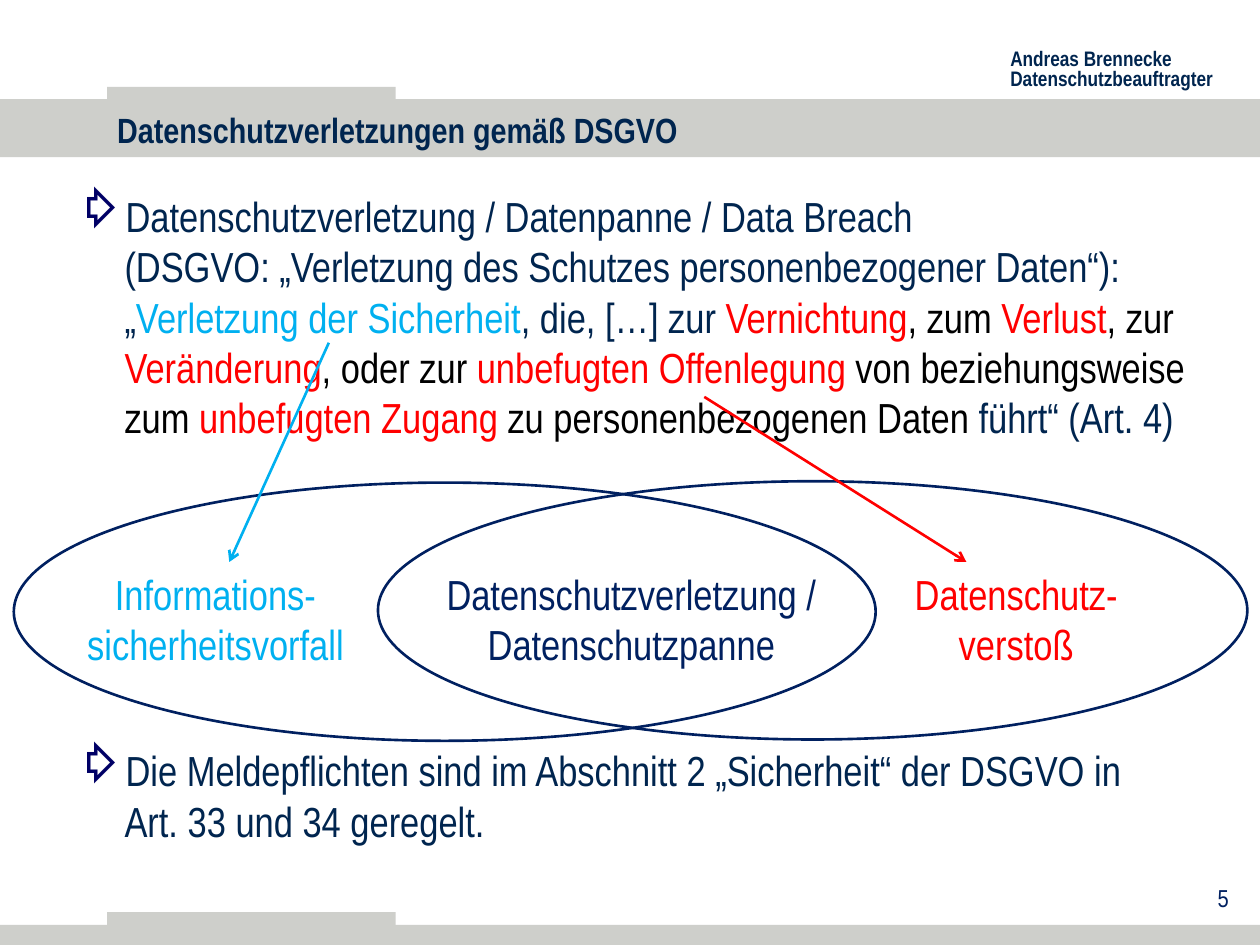
from typing import NamedTuple

from lxml.etree import SubElement
from pptx import Presentation
from pptx.dml.color import RGBColor
from pptx.enum.shapes import MSO_CONNECTOR, MSO_SHAPE
from pptx.enum.text import MSO_ANCHOR, MSO_AUTO_SIZE, PP_ALIGN
from pptx.oxml.ns import qn
from pptx.util import Inches, Pt

SLIDE_WIDTH, SLIDE_HEIGHT = Inches(10), Inches(7.5)
FONT = "Arial Narrow"
NAVY, BLUE, CYAN, RED, BLACK, GREY = "00254F", "002060", "00B0F0", "FF0000", "000000", "CECFCB"
BULLET_COLOR = "000066"


class Area(NamedTuple):
    left: float
    top: float
    width: float
    height: float


class Label(NamedTuple):
    area: Area
    words: str
    color: str


class Arrow(NamedTuple):
    start: tuple[float, float]
    end: tuple[float, float]
    color: str


class Point(NamedTuple):
    runs: list[tuple[str, str]]
    space_before: float


def across(percent: float) -> int:
    return round(SLIDE_WIDTH * percent / 100)


def down(percent: float) -> int:
    return round(SLIDE_HEIGHT * percent / 100)


def place(area: Area) -> tuple[int, int, int, int]:
    return across(area.left), down(area.top), across(area.width), down(area.height)


def rgb(color: str) -> RGBColor:
    return RGBColor.from_string(color)


def write(paragraph, words: str, *, color: str, size: float = 24, bold: bool = False,
          align=PP_ALIGN.LEFT, spacing: float = 1.0) -> None:
    paragraph.alignment = align
    paragraph.line_spacing = spacing
    for number, line in enumerate(words.split("\n")):
        if number:
            paragraph.add_line_break()
        if line:
            run = paragraph.add_run()
            run.text = line
            run.font.name = FONT
            run.font.size = Pt(size)
            run.font.bold = bold
            run.font.color.rgb = rgb(color)


def add_frame(slide, area: Area, wrap: bool = True):
    frame = slide.shapes.add_textbox(*place(area)).text_frame
    frame.word_wrap = wrap
    return frame


def add_band(slide, area: Area) -> None:
    band = slide.shapes.add_shape(MSO_SHAPE.RECTANGLE, *place(area))
    band.shadow.inherit = False
    band.fill.solid()
    band.fill.fore_color.rgb = rgb(GREY)
    band.line.fill.background()


def add_set(slide, area: Area) -> None:
    ellipse = slide.shapes.add_shape(MSO_SHAPE.OVAL, *place(area))
    ellipse.shadow.inherit = False
    ellipse.fill.background()
    ellipse.line.color.rgb = rgb(BLUE)
    ellipse.line.width = Pt(1.5)


def add_arrow(slide, arrow: Arrow) -> None:
    (x1, y1), (x2, y2) = arrow.start, arrow.end
    connector = slide.shapes.add_connector(
        MSO_CONNECTOR.STRAIGHT, across(x1), down(y1), across(x2), down(y2))
    connector.line.color.rgb = rgb(arrow.color)
    connector.line.width = Pt(1.5)
    SubElement(connector.line._get_or_add_ln(), qn("a:tailEnd"), type="arrow")
    SubElement(connector._element.spPr, qn("a:effectLst"))


def add_bullet(paragraph) -> None:
    properties = paragraph._p.get_or_add_pPr()
    properties.set("marL", str(Inches(0.38)))
    properties.set("indent", str(-Inches(0.38)))
    bullet_color = SubElement(properties, qn("a:buClr"))
    SubElement(bullet_color, qn("a:srgbClr"), val=BULLET_COLOR)
    SubElement(properties, qn("a:buChar"), char="⇨")


BANDS = [
    Area(left, top, width, height)
    for left, width, tops, height in [(0, 100, (10.5, 97.87), 6.13), (8.5, 22.9, (9.2, 96.53), 1.73)]
    for top in tops
]
BANDS[1] = BANDS[1]._replace(height=100 - BANDS[1].top)

POINTS = [
    Point([
        ("Datenschutzverletzung / Datenpanne / Data Breach\n"
         "(DSGVO: „Verletzung des Schutzes personenbezogener Daten“):\n„", NAVY),
        ("Verletzung der Sicherheit", CYAN),
        (", die, […] zur ", NAVY),
        ("Vernichtung", RED),
        (", zum", BLACK),
        (" Verlust", RED),
        (", zur ", BLACK),
        ("Veränderung", RED),
        (", oder zur ", BLACK),
        ("unbefugten Offenlegung ", RED),
        ("von beziehungsweise zum ", BLACK),
        ("unbefugten Zugang ", RED),
        ("zu personenbezogenen Daten ", BLACK),
        ("führt“ (Art. 4)", NAVY),
    ], 0),
    Point([("Die Meldepflichten sind im Abschnitt 2 „Sicherheit“ der DSGVO in\n"
            "Art. 33 und 34 geregelt.", NAVY)], 173),
]

LABELS = [
    Label(Area(5.8, 59.47, 22.6, 12.13), "Informations-\nsicherheitsvorfall", CYAN),
    Label(Area(71.5, 59.47, 18.3, 12.13), "Datenschutz-\nverstoß", RED),
    Label(Area(34.2, 59.47, 31.8, 12.13), "Datenschutzverletzung /\nDatenschutzpanne", BLUE),
]
SETS = [Area(1.1, 51.07, 68.4, 27.33), Area(30, 50.93, 69, 27.33)]
ARROWS = [
    Arrow((26.1, 36.27), (18.2, 59.47), CYAN),
    Arrow((55.9, 42), (76.7, 59.47), RED),
]


def main() -> None:
    presentation = Presentation()
    presentation.slide_width, presentation.slide_height = SLIDE_WIDTH, SLIDE_HEIGHT
    slide = presentation.slides.add_slide(presentation.slide_layouts[5])

    for band in BANDS:
        add_band(slide, band)

    author = add_frame(slide, Area(79.2, 4.67, 18.3, 5.6), wrap=False)
    write(author.paragraphs[0], "Andreas Brennecke\nDatenschutzbeauftragter",
          color=NAVY, size=12, bold=True, spacing=0.8)

    title = slide.shapes.title
    title.left, title.top, title.width, title.height = place(Area(8.3, 10.93, 87, 5.6))
    title.text_frame.vertical_anchor = MSO_ANCHOR.MIDDLE
    title.text_frame.auto_size = MSO_AUTO_SIZE.NONE
    write(title.text_frame.paragraphs[0], "Datenschutzverletzungen gemäß DSGVO",
          color=NAVY, size=20, bold=True)
    slide.shapes._spTree.append(title._element)

    body = add_frame(slide, Area(5.1, 19.47, 93.2, 75.87))
    for number, point in enumerate(POINTS):
        paragraph = body.add_paragraph() if number else body.paragraphs[0]
        add_bullet(paragraph)
        paragraph.space_before = Pt(point.space_before)
        for words, color in point.runs:
            write(paragraph, words, color=color)

    for label in LABELS:
        frame = add_frame(slide, label.area, wrap=False)
        write(frame.paragraphs[0], label.words, color=label.color, align=PP_ALIGN.CENTER)
    for area in SETS:
        add_set(slide, area)

    page = add_frame(slide, Area(76.3, 92.8, 22.2, 5.73))
    write(page.paragraphs[0], "5", color=BLUE, size=14, align=PP_ALIGN.RIGHT)

    for arrow in ARROWS:
        add_arrow(slide, arrow)

    presentation.save("out.pptx")


if __name__ == "__main__":
    main()
